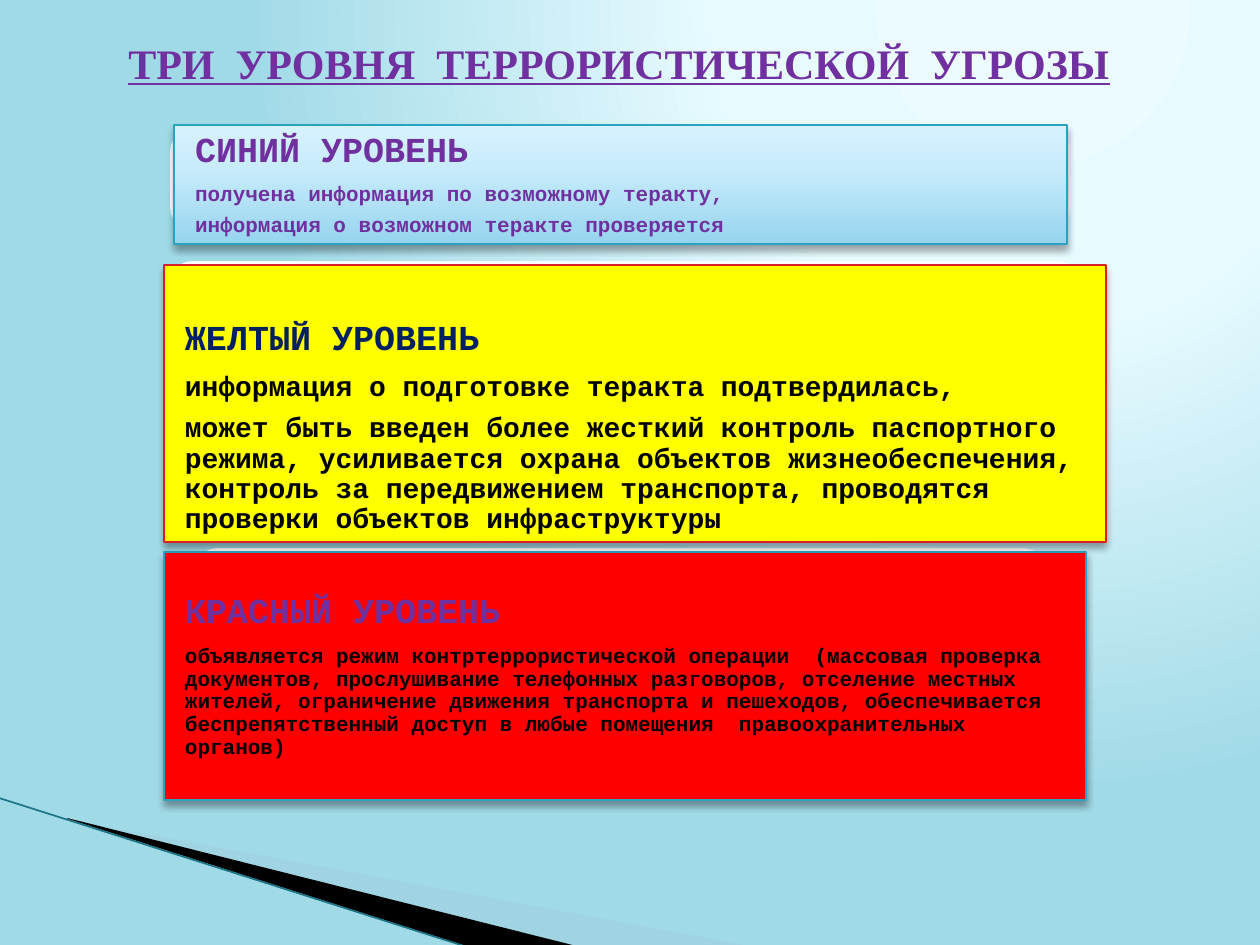
from typing import NamedTuple

from lxml.etree import SubElement
from pptx import Presentation
from pptx.dml.color import RGBColor
from pptx.enum.shapes import MSO_CONNECTOR, MSO_SHAPE
from pptx.enum.text import MSO_ANCHOR, PP_ALIGN
from pptx.oxml import parse_xml
from pptx.oxml.ns import nsdecls, qn
from pptx.util import Pt

PX = 914400 // 126
PURPLE, NAVY, BLACK, TEAL = "7030A0", "002060", "000000", "2DA2BF"


class Box(NamedTuple):
    left: int
    top: int
    width: int
    height: int

    def emu(self) -> list[int]:
        return [value * PX for value in self]


class Line(NamedTuple):
    text: str
    size: int
    color: str


class Level(NamedTuple):
    backing: Box
    backing_fill: str
    panel: Box
    fill: str | None  # None means the blue gradient
    border: str
    top_inset: int
    lines: list[Line]


class Wedge(NamedTuple):
    points: list[tuple[int, int]]
    fill: str
    opacity: int


WEDGES = [
    Wedge([(69, 820), (750, 946), (575, 946), (69, 819)], "A0CBDC", 40),
    Wedge([(67, 818), (576, 946), (469, 947), (68, 819)], BLACK, 100),
]

LEVELS = [
    Level(Box(174, 136, 893, 87), TEAL, Box(174, 125, 893, 119), None, TEAL, 0, [
        Line("СИНИЙ УРОВЕНЬ", 20, PURPLE),
        Line("получена информация по возможному теракту,", 12, PURPLE),
        Line("информация о возможном теракте проверяется", 12, PURPLE),
    ]),
    Level(Box(194, 552, 853, 149), TEAL, Box(164, 552, 922, 248), "FF0000", TEAL, 0, [
        Line("КРАСНЫЙ УРОВЕНЬ", 20, PURPLE),
        Line("объявляется режим контртеррористической операции  (массовая проверка "
             "документов, прослушивание телефонных разговоров, отселение местных "
             "жителей, ограничение движения транспорта и пешеходов, обеспечивается  "
             "беспрепятственный доступ в любые помещения  правоохранительных органов)",
             12, BLACK),
    ]),
    Level(Box(174, 265, 902, 108), "FFFF00", Box(164, 265, 942, 277), "FFFF00",
          "DA1F28", 48, [
        Line("ЖЕЛТЫЙ УРОВЕНЬ", 20, NAVY),
        Line("информация о подготовке теракта подтвердилась,", 16, BLACK),
        Line("может быть введен более жесткий контроль паспортного режима, "
             "усиливается охрана объектов жизнеобеспечения, контроль за "
             "передвижением транспорта, проводятся проверки объектов инфраструктуры",
             16, BLACK),
    ]),
]


def rgb(color: str) -> RGBColor:
    return RGBColor.from_string(color)


def set_gradient(owner, stops: list[tuple[int, str]], direction: str) -> None:
    """Fill a shape or a slide background with colour stops given in percent."""
    fill = owner.background.fill if hasattr(owner, "background") else owner.fill
    fill.gradient()
    old = next(owner.element.iter(qn("a:gradFill")))
    stop_xml = "".join(
        f'<a:gs pos="{position * 1000}"><a:srgbClr val="{color}"/></a:gs>'
        for position, color in stops)
    new = parse_xml(f'<a:gradFill {nsdecls("a")} rotWithShape="1">'
                    f'<a:gsLst>{stop_xml}</a:gsLst>{direction}</a:gradFill>')
    old.getparent().replace(old, new)


def add_soft_shadow(shape) -> None:
    shape.shadow.inherit = False
    effects = shape.element.spPr.find(qn("a:effectLst"))
    effects.append(parse_xml(
        f'<a:outerShdw {nsdecls("a")} blurRad="{Pt(4)}" dist="{Pt(3)}" '
        'dir="5400000" rotWithShape="0"><a:srgbClr val="000000">'
        '<a:alpha val="35000"/></a:srgbClr></a:outerShdw>'))


def add_wedge(slide, wedge: Wedge) -> None:
    builder = slide.shapes.build_freeform(*wedge.points[0], scale=PX)
    builder.add_line_segments(wedge.points[1:], close=True)
    shape = builder.convert_to_shape()
    shape.shadow.inherit = False
    shape.line.fill.background()
    shape.fill.solid()
    shape.fill.fore_color.rgb = rgb(wedge.fill)
    if wedge.opacity < 100:
        color = next(shape.element.spPr.iter(qn("a:srgbClr")))
        SubElement(color, qn("a:alpha"), val=str(wedge.opacity * 1000))


def add_line(slide, kind, start: tuple[int, int], end: tuple[int, int],
             color: str, width: float) -> None:
    line = slide.shapes.add_connector(kind, *(value * PX for value in start + end))
    line.line.color.rgb = rgb(color)
    line.line.width = Pt(width)
    SubElement(line.element.spPr, qn("a:effectLst"))


def add_block(slide, kind, box: Box, fill: str | None, border: str, width: float):
    block = slide.shapes.add_shape(kind, *box.emu())
    block.shadow.inherit = False
    if fill:
        block.fill.solid()
        block.fill.fore_color.rgb = rgb(fill)
    block.line.color.rgb = rgb(border)
    block.line.width = Pt(width)
    return block


def add_level(slide, level: Level) -> None:
    add_block(slide, MSO_SHAPE.ROUNDED_RECTANGLE, level.backing,
              level.backing_fill, "FFFFFF", 4.33)
    panel = add_block(slide, MSO_SHAPE.RECTANGLE, level.panel,
                      level.fill, level.border, 0.75)
    if level.fill is None:
        set_gradient(panel, [(0, "96D4EE"), (65, "C9ECFC"), (100, "D7F2FF")],
                     '<a:lin ang="16200000" scaled="0"/>')
    add_soft_shadow(panel)
    frame = panel.text_frame
    frame.word_wrap = True
    frame.vertical_anchor = MSO_ANCHOR.MIDDLE
    frame.margin_left = frame.margin_right = 21 * PX
    frame.margin_top = level.top_inset * PX
    frame.margin_bottom = 0
    for index, line in enumerate(level.lines):
        paragraph = frame.add_paragraph() if index else frame.paragraphs[0]
        paragraph.text = line.text
        paragraph.alignment = PP_ALIGN.LEFT
        paragraph.line_spacing = 0.9
        paragraph.space_after = Pt(line.size * 0.4)
        style_font(paragraph.font, "Courier New", line.size, line.color)


def style_font(font, name: str, size: int, color: str) -> None:
    font.name = name
    font.size = Pt(size)
    font.bold = True
    font.color.rgb = rgb(color)


def add_title(slide, text: str) -> None:
    frame = slide.shapes.add_textbox(*Box(111, 31, 1016, 63).emu()).text_frame
    frame.word_wrap = False
    frame.vertical_anchor = MSO_ANCHOR.MIDDLE
    title = frame.paragraphs[0]
    title.text = text
    title.alignment = PP_ALIGN.CENTER
    style_font(title.font, "Times New Roman", 24, PURPLE)
    title.font.underline = True


def main() -> None:
    presentation = Presentation()
    presentation.slide_width = 1260 * PX
    presentation.slide_height = 945 * PX
    slide = presentation.slides.add_slide(presentation.slide_layouts[6])
    set_gradient(slide, [(0, "EBFBFF"), (40, "E7FBFF"), (100, "A1DAE7")],
                 '<a:path path="circle">'
                 '<a:fillToRect l="65000" t="0" r="0" b="98000"/></a:path>')
    for wedge in WEDGES:
        add_wedge(slide, wedge)
    add_line(slide, MSO_CONNECTOR.STRAIGHT, (-1, 798), (467, 947), "1B7485", 0.95)
    add_title(slide, "ТРИ  УРОВНЯ  ТЕРРОРИСТИЧЕСКОЙ  УГРОЗЫ")
    for level in LEVELS:
        add_level(slide, level)
    add_line(slide, MSO_CONNECTOR.ELBOW, (1067, 226), (1066, 236), TEAL, 0.75)
    presentation.save("out.pptx")


if __name__ == "__main__":
    main()
